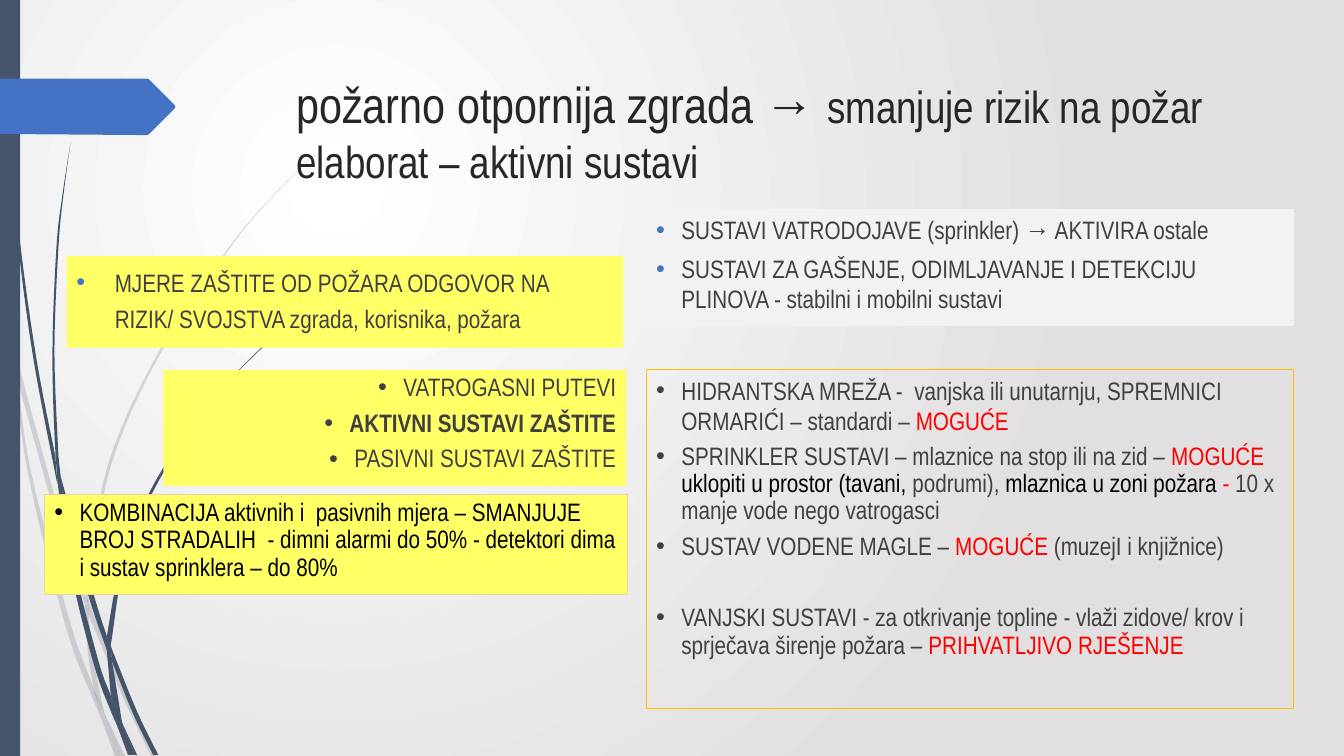
import pptx
import pptx.dml.color
import pptx.enum.dml
import pptx.enum.shapes
import pptx.enum.text
import pptx.oxml.ns
import pptx.util
from lxml import etree

ROWS = 750
COLUMNS = 1333
HEIGHT = pptx.util.Inches(7.5)
UNIT = HEIGHT / ROWS
FONT = "Arial Narrow"
BODY_SIZE = 18
CURVE_STEPS = 6
COLORS = {
    "center": "FFFFFF", "edge": "E1DFDF", "slate": "44546A", "blue": "4472C4",
    "title": "262626", "gray": "404040", "black": "000000", "red": "FF0000",
    "yellow": "FFFF66", "sand": "ECD3A6", "silver": "F2F2F2", "gold": "FFC000",
}

PALE_WISPS = [
    ([(0, 282), (9, 322), (11, 350)], [(10, 344), (0, 299)]),
    ([(14, 345), (62, 520), (85, 586)], [(84, 599), (58, 522), (17, 376)]),
    ([(88, 596), (92, 607), (127, 692), (155, 750)], [(150, 750), (123, 694), (88, 610)]),
    ([(105, 711), (124, 750)], [(119, 750)]),
    ([(11, 350), (17, 376), (31, 469), (70, 619), (93, 683), (101, 714)],
     [(92, 693), (65, 621), (28, 470), (11, 350)]),
    ([(84, 599), (88, 610), (91, 646), (103, 706), (105, 711)],
     [(96, 692), (93, 683), (87, 646), (84, 599)]),
    ([(85, 586), (85, 584), (107, 461), (158, 348), (228, 244), (268, 197), (312, 153)],
     [(312, 154), (268, 198), (229, 245), (160, 349), (110, 462), (88, 584), (88, 596)]),
    ([(101, 714), (119, 750)], [(114, 750)]),
    ([(85, 586), (88, 596), (88, 610)], [(84, 599)]),
    ([(93, 683), (105, 711), (119, 750)], [(101, 714)]),
]
DARK_WISPS = [
    ([(3, 0), (7, 110), (17, 233), (33, 355), (57, 481)],
     [(55, 453), (36, 355), (19, 232), (8, 109), (4, 0)]),
    ([(60, 472), (93, 590), (106, 631)], [(106, 645), (88, 592), (64, 505)]),
    ([(110, 641), (113, 649), (136, 706), (157, 749)], [(152, 749), (132, 708), (111, 656)]),
    ([(57, 477), (64, 505), (72, 556), (98, 657), (110, 691), (117, 722)],
     [(111, 708), (93, 659), (68, 557), (57, 477)]),
    ([(70, 141), (62, 193), (56, 245), (52, 349), (55, 449), (60, 472)],
     [(58, 453), (54, 349), (58, 245), (63, 193), (70, 141)]),
    ([(122, 719), (136, 749)], [(133, 749)]),
    ([(55, 449), (60, 472), (64, 505)], [(57, 477)]),
    ([(106, 631), (122, 551), (156, 474), (204, 405), (231, 373), (260, 344)],
     [(261, 344), (231, 374), (205, 406), (158, 476), (125, 552), (111, 633), (110, 641)]),
    ([(117, 722), (131, 749)], [(127, 749)]),
    ([(106, 645), (111, 656), (121, 716), (122, 719)], [(116, 706), (110, 691)]),
    ([(106, 631), (110, 641), (111, 656)], [(106, 645)]),
    ([(110, 691), (122, 719), (133, 749)], [(130, 749), (117, 722)]),
]
ARROW_TAG = [(0, 78), (146, 78), (148, 79), (173, 104), (174, 106),
             (173, 108), (148, 133), (146, 134), (136, 134), (0, 133)]

TITLE_AT = (284, 68, 975, 140)
TITLE_RUNS = [("požarno otpornija zgrada → ", 36), ("smanjuje rizik na požar", 32),
              ("\n", 32), ("elaborat – aktivni sustavi", 32)]

RIGHT_COLUMN = 641
RIGHT_WIDTH = 642
LIST_ROW = 367
INDENT = 25
BOXES = [
    {"at": (66, 254, 552, 91), "fill": "yellow", "bullet": "blue", "indent": 38, "spacing": 1.2,
     "paras": [[("MJERE ZAŠTITE OD POŽARA ODGOVOR NA RIZIK/ SVOJSTVA zgrada, korisnika, požara", "gray")]]},
    {"at": (162, LIST_ROW, 459, 115), "fill": "yellow", "right": True, "bold": 1,
     "paras": [[("VATROGASNI PUTEVI", "gray")],
               [("AKTIVNI SUSTAVI ZAŠTITE", "gray")],
               [("PASIVNI SUSTAVI ZAŠTITE", "gray")]]},
    {"at": (44, 491, 578, 99), "fill": "yellow", "line": "sand",
     "paras": [[("KOMBINACIJA aktivnih i  pasivnih mjera – SMANJUJE BROJ STRADALIH  - dimni alarmi "
                 "do 50% - detektori dima i sustav sprinklera – do 80%", "black")]]},
    {"at": (RIGHT_COLUMN, 208, RIGHT_WIDTH, 115), "fill": "silver", "line": "silver",
     "bullet": "blue", "spacing": 1.0,
     "paras": [[("SUSTAVI VATRODOJAVE (sprinkler) → AKTIVIRA ostale", "gray")],
               [("SUSTAVI ZA GAŠENJE, ODIMLJAVANJE I DETEKCIJU PLINOVA - stabilni i mobilni sustavi", "gray")]]},
    {"at": (RIGHT_COLUMN, LIST_ROW, RIGHT_WIDTH, 336), "line": "gold",
     "first_spacing": 1.0, "last_gap": 31.5,
     "paras": [
         [("HIDRANTSKA MREŽA -  vanjska ili unutarnju, SPREMNICI ORMARIĆI – standardi – ", "gray"),
          ("MOGUĆE", "red")],
         [("SPRINKLER SUSTAVI – mlaznice na stop ili na zid – ", "gray"), ("MOGUĆE ", "red"),
          ("uklopiti u prostor (tavani, ", "black"), ("podrumi), ", "gray"),
          ("mlaznica u zoni požara", "black"), (" - ", "red"),
          ("10 x manje vode nego vatrogasci", "gray")],
         [("SUSTAV VODENE MAGLE – ", "gray"), ("MOGUĆE", "red"), (" (muzejI i knjižnice)", "gray")],
         [("VANJSKI SUSTAVI - za otkrivanje topline - vlaži zidove/ krov i sprječava širenje požara – ", "gray"),
          ("PRIHVATLJIVO RJEŠENJE", "red")]]},
]


def rgb(name):
    return pptx.dml.color.RGBColor.from_string(COLORS[name])


def add_element(parent, tag, **attributes):
    return etree.SubElement(parent, pptx.oxml.ns.qn(tag), attributes)


def place(at):
    return [round(value * UNIT) for value in at]


def smooth(points):
    padded = [points[0], *points, points[-1]]
    curve = [points[0]]
    for a, b, c, d in zip(padded, padded[1:], padded[2:], padded[3:]):
        for step in range(1, CURVE_STEPS + 1):
            t = step / CURVE_STEPS
            curve.append(tuple(
                (2 * q + (r - p) * t + (2 * p - 5 * q + 4 * r - s) * t ** 2
                 + (3 * q - p - 3 * r + s) * t ** 3) / 2
                for p, q, r, s in zip(a, b, c, d)))
    return curve


def paint(shape, color, alpha=None):
    shape.shadow.inherit = False
    shape.line.fill.background()
    shape.fill.solid()
    shape.fill.fore_color.rgb = rgb(color)
    if alpha:
        tint = shape.fill._xPr.find(".//" + pptx.oxml.ns.qn("a:srgbClr"))
        add_element(tint, "a:alpha", val=str(alpha * 1000))


def draw_outline(page, points, color, alpha=None):
    corners = [place(point) for point in points]
    builder = page.shapes.build_freeform(*corners[0])
    builder.add_line_segments(corners[1:], close=True)
    paint(builder.convert_to_shape(), color, alpha)


def add_bullet(para, indent, color):
    properties = para._p.get_or_add_pPr()
    properties.set("marL", str(round(indent * UNIT)))
    properties.set("indent", str(-round(indent * UNIT)))
    if color:
        add_element(add_element(properties, "a:buClr"), "a:srgbClr", val=COLORS[color])
    add_element(properties, "a:buFont", typeface="Arial")
    add_element(properties, "a:buChar", char="•")


def add_box(page, content):
    box = page.shapes.add_textbox(*place(content["at"]))
    box.text_frame.word_wrap = True
    if "fill" in content:
        box.fill.solid()
        box.fill.fore_color.rgb = rgb(content["fill"])
    if "line" in content:
        box.line.color.rgb = rgb(content["line"])
        box.line.width = pptx.util.Pt(0.75)
    last = len(content["paras"]) - 1
    for index, runs in enumerate(content["paras"]):
        para = box.text_frame.add_paragraph() if index else box.text_frame.paragraphs[0]
        add_bullet(para, content.get("indent", INDENT), content.get("bullet"))
        para.line_spacing = content.get("spacing", 0.9)
        if index == 0:
            para.line_spacing = content.get("first_spacing", para.line_spacing)
        else:
            para.space_before = pptx.util.Pt(content.get("last_gap", 6) if index == last else 6)
        if content.get("right"):
            para.alignment = pptx.enum.text.PP_ALIGN.RIGHT
        para.font.name = FONT
        para.font.size = pptx.util.Pt(BODY_SIZE)
        para.font.bold = index == content.get("bold")
        para.font.color.rgb = rgb(runs[0][1])
        for text, color in runs:
            span = para.add_run()
            span.text = text
            if color != runs[0][1]:
                span.font.color.rgb = rgb(color)


def add_title(page):
    box = page.shapes.add_textbox(*place(TITLE_AT))
    box.text_frame.word_wrap = True
    para = box.text_frame.paragraphs[0]
    para.font.name = FONT
    para.font.color.rgb = rgb("title")
    for text, size in TITLE_RUNS:
        if text == "\n":
            para.add_line_break()
            continue
        span = para.add_run()
        span.text = text
        span.font.size = pptx.util.Pt(size)


def set_background(page):
    fill = page.background.fill
    fill.gradient()
    for stop, color, position in zip(fill.gradient_stops, ("center", "edge"), (0, 1)):
        stop.color.rgb = rgb(color)
        stop.position = position
    gradient = page._element.find(".//" + pptx.oxml.ns.qn("a:gradFill"))
    linear = gradient.find(pptx.oxml.ns.qn("a:lin"))
    circle = etree.Element(pptx.oxml.ns.qn("a:path"), {"path": "circle"})
    add_element(circle, "a:fillToRect", l="50000", t="50000", r="100000", b="100000")
    gradient.replace(linear, circle)


def main():
    deck = pptx.Presentation()
    deck.slide_width, deck.slide_height = place((COLUMNS, ROWS))
    page = deck.slides.add_slide(deck.slide_layouts[6])
    set_background(page)
    for wisps, alpha in ((PALE_WISPS, 20), (DARK_WISPS, None)):
        for there, back in wisps:
            draw_outline(page, smooth(there) + smooth(back), "slate", alpha)
    band = page.shapes.add_shape(pptx.enum.shapes.MSO_SHAPE.RECTANGLE, *place((0, 0, 20, ROWS)))
    paint(band, "slate")
    draw_outline(page, ARROW_TAG, "blue")
    add_title(page)
    for content in BOXES:
        add_box(page, content)
    deck.save("out.pptx")


if __name__ == "__main__":
    main()
